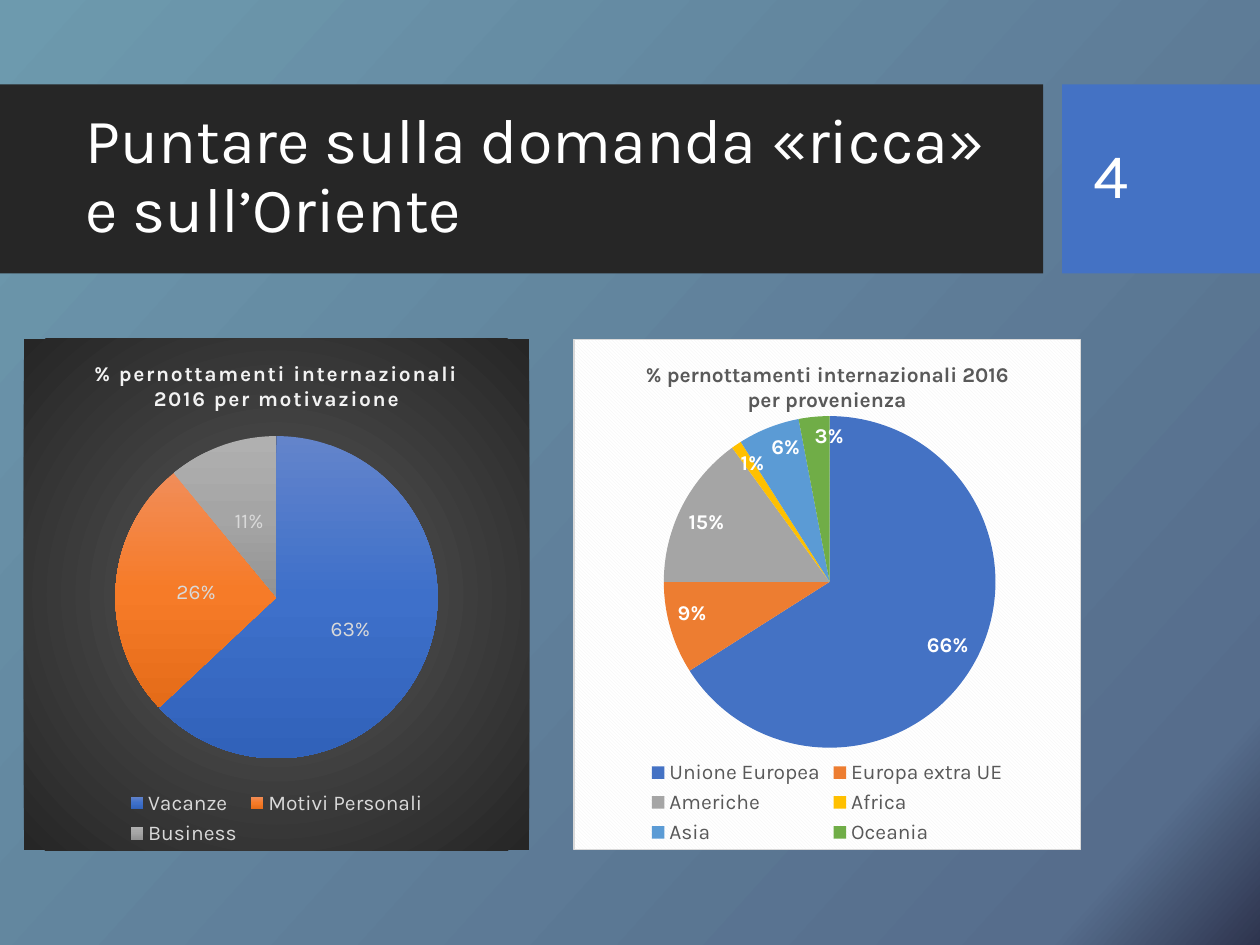
from dataclasses import dataclass

from lxml import etree
from pptx import Presentation
from pptx.chart.data import CategoryChartData
from pptx.dml.color import RGBColor
from pptx.enum.chart import XL_CHART_TYPE as ChartType
from pptx.enum.chart import XL_LABEL_POSITION as LabelPosition
from pptx.enum.chart import XL_LEGEND_POSITION as LegendPosition
from pptx.enum.shapes import MSO_SHAPE as Shape
from pptx.enum.text import MSO_ANCHOR as Anchor
from pptx.enum.text import MSO_AUTO_SIZE as AutoSize
from pptx.enum.text import PP_ALIGN as Align
from pptx.oxml import parse_xml
from pptx.util import Inches, Pt


@dataclass(frozen=True)
class Theme:
    font: str = "Karla"
    heading: int = 36
    label: int = 12
    white: str = "FFFFFF"
    dark: str = "262626"
    blue: str = "4472C4"
    backdrop: tuple = ((0, "6D9AAE"), (90, "566D8C"), (100, "2E344E"))


THEME = Theme()
NS_A = "http://schemas.openxmlformats.org/drawingml/2006/main"
NS_C = "http://schemas.openxmlformats.org/drawingml/2006/chart"

TITLE = "Puntare sulla domanda «ricca» e sull’Oriente"
NUMBER = "4"
BANDS = [(0, 8.28, THEME.dark), (8.43, 1.57, THEME.blue)]
BAND_TOP, BAND_HEIGHT = 0.67, 1.5
CHART_TOP, CHART_HEIGHT = 2.69, 4.06


def color_xml(color):
    return f'<a:srgbClr val="{color}"/>'


def gradient_xml(stops, angle=None):
    stop_xml = "".join(f'<a:gs pos="{position * 1000}">{color_xml(color)}</a:gs>'
                       for position, color in stops)
    if angle is None:
        direction = ('<a:path path="circle"><a:fillToRect l="50000" t="50000" '
                     'r="50000" b="50000"/></a:path>')
    else:
        direction = f'<a:lin ang="{angle * 60000}" scaled="0"/>'
    return (f'<a:gradFill xmlns:a="{NS_A}" rotWithShape="1"><a:gsLst>{stop_xml}</a:gsLst>'
            f'{direction}</a:gradFill>')


def shade_xml(colors):
    return gradient_xml(zip((0, 50, 100), colors), 90)


def solid_xml(color):
    return f'<a:solidFill xmlns:a="{NS_A}">{color_xml(color)}</a:solidFill>'


CHARTS = [
    dict(
        title="% pernottamenti internazionali 2016 per motivazione",
        left=0.19, width=4.01, plot=(0.18, 0.19, 0.64, 0.63),
        title_color="F2F2F2", title_spacing=100, legend_color="D9D9D9",
        label_color="D9D9D9", label_bold=False, position=LabelPosition.CENTER,
        area=gradient_xml(((0, "595959"), (100, THEME.dark))) + "<a:ln><a:noFill/></a:ln>",
        slices=[
            ("Vacanze", 63, shade_xml(("6384CB", "3E70CA", "3162BA"))),
            ("Motivi Personali", 26, shade_xml(("F18D59", "F67B28", "E56C19"))),
            ("Business", 11, shade_xml(("B0B0B0", "A5A5A5", "939393"))),
        ],
    ),
    dict(
        title="% pernottamenti internazionali 2016 per provenienza",
        left=4.55, width=4.03, plot=(0.01, 0.15, 0.99, 0.65),
        title_color="595959", title_spacing=0, legend_color="595959",
        label_color=THEME.white, label_bold=True, position=LabelPosition.INSIDE_END,
        area=(f'<a:pattFill prst="dkDnDiag"><a:fgClr>{color_xml("F2F2F2")}</a:fgClr>'
              f'<a:bgClr>{color_xml(THEME.white)}</a:bgClr></a:pattFill>'
              f'<a:ln w="9525">{solid_xml("D9D9D9")}</a:ln>'),
        slices=[
            ("Unione Europea", 66, solid_xml(THEME.blue)),
            ("Europa extra UE", 9, solid_xml("ED7D31")),
            ("Americhe", 15, solid_xml("A5A5A5")),
            ("Africa", 1, solid_xml("FFC000")),
            ("Asia", 6, solid_xml("5B9BD5")),
            ("Oceania", 3, solid_xml("70AD47")),
        ],
    ),
]


def style_font(font, size, color, bold=False):
    font.name, font.size, font.bold = THEME.font, Pt(size), bold
    font.color.rgb = RGBColor.from_string(color)


def write_heading(shape, text):
    frame = shape.text_frame
    frame.text = text
    frame.word_wrap = True
    frame.auto_size = AutoSize.NONE
    frame.vertical_anchor = Anchor.MIDDLE
    paragraph = frame.paragraphs[0]
    paragraph.alignment = Align.LEFT
    paragraph.line_spacing = 0.9
    style_font(paragraph.font, THEME.heading, THEME.white)


def set_plot_layout(chart, box):
    plot_area = chart._chartSpace.chart.plotArea
    for old in plot_area.findall(f"{{{NS_C}}}layout"):
        plot_area.remove(old)
    sizes = "".join(f'<c:{name} val="{value}"/>' for name, value in zip("xywh", box))
    plot_area.insert(0, parse_xml(
        f'<c:layout xmlns:c="{NS_C}"><c:manualLayout><c:layoutTarget val="inner"/>'
        f'<c:xMode val="edge"/><c:yMode val="edge"/>{sizes}</c:manualLayout></c:layout>'))


def add_pie(slide, item):
    names, values, fills = zip(*item["slices"])
    data = CategoryChartData()
    data.categories = names
    data.add_series("Series 1", values)
    chart = slide.shapes.add_chart(
        ChartType.PIE, Inches(item["left"]), Inches(CHART_TOP),
        Inches(item["width"]), Inches(CHART_HEIGHT), data).chart
    style_font(chart.font, 10, THEME.white)

    chart.has_title = True
    frame = chart.chart_title.text_frame
    frame.text = item["title"]
    chart.chart_title.include_in_layout = False
    font = frame.paragraphs[0].runs[0].font
    style_font(font, THEME.label, item["title_color"], True)
    font._element.set("spc", str(item["title_spacing"]))

    chart.has_legend = True
    chart.legend.position = LegendPosition.BOTTOM
    chart.legend.include_in_layout = False
    style_font(chart.legend.font, THEME.label, item["legend_color"])

    plot = chart.plots[0]
    plot.vary_by_categories = True
    plot.has_data_labels = True
    labels = plot.data_labels
    labels.show_percentage = True
    labels.show_value = False
    labels.number_format, labels.number_format_is_linked = "0%", False
    labels.position = item["position"]
    style_font(labels.font, THEME.label, item["label_color"], item["label_bold"])

    for index, fill in enumerate(fills):
        point = plot.series[0]._element.get_or_add_dPt_for_point(index)
        point.get_or_add_spPr().insert(0, parse_xml(fill))

    set_plot_layout(chart, item["plot"])
    chart._chartSpace.chart.addnext(parse_xml(
        f'<c:spPr xmlns:c="{NS_C}" xmlns:a="{NS_A}">{item["area"]}</c:spPr>'))


def main():
    presentation = Presentation()
    presentation.slide_width, presentation.slide_height = Inches(10), Inches(7.5)
    slide = presentation.slides.add_slide(presentation.slide_layouts[5])

    background = slide.background.fill
    background.solid()
    properties = slide._element.cSld.bg.bgPr
    properties.replace(properties[0], parse_xml(gradient_xml(THEME.backdrop, 42)))

    for left, width, color in BANDS:
        band = slide.shapes.add_shape(Shape.RECTANGLE, Inches(left), Inches(BAND_TOP),
                                      Inches(width), Inches(BAND_HEIGHT))
        band.shadow.inherit = False
        band.fill.solid()
        band.fill.fore_color.rgb = RGBColor.from_string(color)
        band.line.fill.background()

    title = slide.shapes.title
    title.left, title.top = Inches(0.58), Inches(0.82)
    title.width, title.height = Inches(7.53), Inches(1.18)
    write_heading(title, TITLE)
    slide.shapes._spTree.append(title._element)

    for item in CHARTS:
        add_pie(slide, item)

    number = slide.shapes.add_textbox(Inches(8.58), Inches(0.82), Inches(1.27), Inches(1.19))
    write_heading(number, NUMBER)
    presentation.save("out.pptx")


if __name__ == "__main__":
    main()
